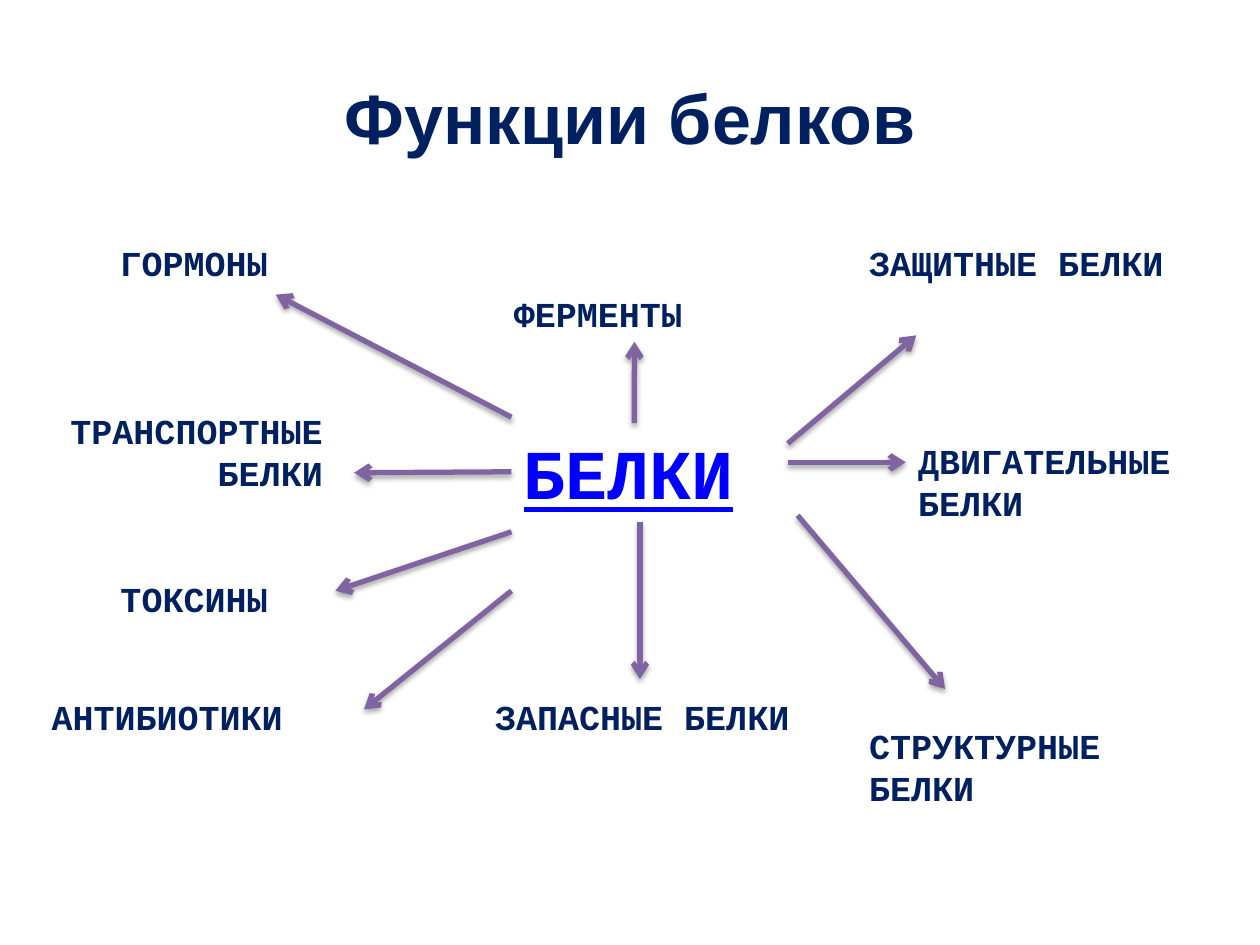
from lxml import etree
from pptx import Presentation
from pptx.dml.color import RGBColor
from pptx.enum.shapes import MSO_CONNECTOR
from pptx.enum.text import MSO_ANCHOR, MSO_AUTO_SIZE, PP_ALIGN
from pptx.oxml import parse_xml
from pptx.oxml.ns import nsdecls, qn
from pptx.util import Cm, Pt

STRAIGHT = MSO_CONNECTOR.STRAIGHT
MIDDLE = MSO_ANCHOR.MIDDLE
GROW = MSO_AUTO_SIZE.SHAPE_TO_FIT_TEXT
LEFT, CENTER, RIGHT = PP_ALIGN.LEFT, PP_ALIGN.CENTER, PP_ALIGN.RIGHT
TOP_SIDE, LEFT_SIDE, BOTTOM_SIDE = 0, 1, 2

COLORS = {"text": "002060", "center": "0000FF", "arrow": "8064A2", "shadow": "000000"}
ONE_LINE, TWO_LINES = 1.12, 1.96

TITLE = "Функции белков"
TITLE_BOX = (1.27, 0.76, 22.86, 3.18)
CENTER_LABEL = "БЕЛКИ"
CENTER_BOX = (10.31, 8.53, 4.95, TWO_LINES)

# text, (left, top, width, height) in cm, alignment
FUNCTIONS = [
    ("ФЕРМЕНТЫ", (10.11, 5.77, 5.36, ONE_LINE), LEFT),
    ("ГОРМОНЫ", (2.18, 4.75, 4.95, ONE_LINE), LEFT),
    ("ТРАНСПОРТНЫЕ БЕЛКИ", (0.41, 8.13, 6.35, TWO_LINES), RIGHT),
    ("ТОКСИНЫ", (2.18, 11.51, 4.17, ONE_LINE), LEFT),
    ("АНТИБИОТИКИ", (0.79, 13.89, 6.15, ONE_LINE), LEFT),
    ("ЗАЩИТНЫЕ БЕЛКИ", (17.27, 4.75, 6.76, TWO_LINES), LEFT),
    ("ДВИГАТЕЛЬНЫЕ БЕЛКИ", (18.26, 8.74, 6.55, TWO_LINES), LEFT),
    ("СТРУКТУРНЫЕ БЕЛКИ", (17.27, 14.48, 7.34, TWO_LINES), LEFT),
    ("ЗАПАСНЫЕ БЕЛКИ", (9.73, 13.89, 6.55, ONE_LINE), LEFT),
]

# function pointed at: (start x, start y, end x, end y) in cm
ARROWS = {
    "ФЕРМЕНТЫ": (12.8, 8.53, 12.8, 6.86),
    "ЗАПАСНЫЕ БЕЛКИ": (12.9, 10.52, 12.9, 13.69),
    "ЗАЩИТНЫЕ БЕЛКИ": (15.88, 8.94, 18.47, 6.76),
    "ДВИГАТЕЛЬНЫЕ БЕЛКИ": (15.88, 9.32, 18.26, 9.32),
    "СТРУКТУРНЫЕ БЕЛКИ": (16.08, 10.39, 19.05, 13.89),
    "ГОРМОНЫ": (10.31, 8.41, 5.56, 5.94),
    "ТРАНСПОРТНЫЕ БЕЛКИ": (10.31, 9.53, 7.14, 9.53),
    "ТОКСИНЫ": (10.31, 10.72, 6.76, 11.91),
    "АНТИБИОТИКИ": (10.31, 11.91, 7.34, 14.3),
}

SHADOW = (
    f'<a:effectLst {nsdecls("a")}>'
    f'<a:outerShdw blurRad="{Pt(3.1)}" dist="{Pt(1.8)}" dir="5400000" rotWithShape="0">'
    f'<a:srgbClr val="{COLORS["shadow"]}"><a:alpha val="35000"/></a:srgbClr>'
    "</a:outerShdw></a:effectLst>"
)


def write(tf, text, size=20, font="Courier New", color="text", align=LEFT, underline=None):
    tf.word_wrap = True
    p = tf.paragraphs[0]
    p.alignment = align
    r = p.add_run()
    r.text = text
    r.font.name, r.font.size = font, Pt(size)
    r.font.bold, r.font.underline = True, underline
    r.font.color.rgb = RGBColor.from_string(COLORS[color])


def add_label(s, text, box, **style):
    sp = s.shapes.add_textbox(*map(Cm, box))
    write(sp.text_frame, text, **style)
    sp.text_frame.auto_size = GROW
    return sp


def add_arrow(s, ends):
    line = s.shapes.add_connector(STRAIGHT, *map(Cm, ends))
    line.line.color.rgb = RGBColor.from_string(COLORS["arrow"])
    line.line.width = Pt(3)
    ln = line.line._get_or_add_ln()
    etree.SubElement(ln, qn("a:tailEnd"), type="arrow")
    ln.addnext(parse_xml(SHADOW))
    return line


def main():
    prs = Presentation()
    prs.slide_width, prs.slide_height = Cm(25.4), Cm(19.05)
    s = prs.slides.add_slide(prs.slide_layouts[5])

    title = s.shapes.title
    title.left, title.top, title.width, title.height = map(Cm, TITLE_BOX)
    title.text_frame.vertical_anchor = MIDDLE
    write(title.text_frame, TITLE, size=40, font="Arial", align=CENTER)

    center = add_label(s, CENTER_LABEL, CENTER_BOX, size=40, color="center", underline=True)
    labels = {text: add_label(s, text, box, align=align) for text, box, align in FUNCTIONS}

    arrows = {text: add_arrow(s, ends) for text, ends in ARROWS.items()}
    arrows["ФЕРМЕНТЫ"].begin_connect(center, TOP_SIDE)
    arrows["ФЕРМЕНТЫ"].end_connect(labels["ФЕРМЕНТЫ"], BOTTOM_SIDE)
    arrows["ТРАНСПОРТНЫЕ БЕЛКИ"].begin_connect(center, LEFT_SIDE)

    prs.save("out.pptx")


if __name__ == "__main__":
    main()
